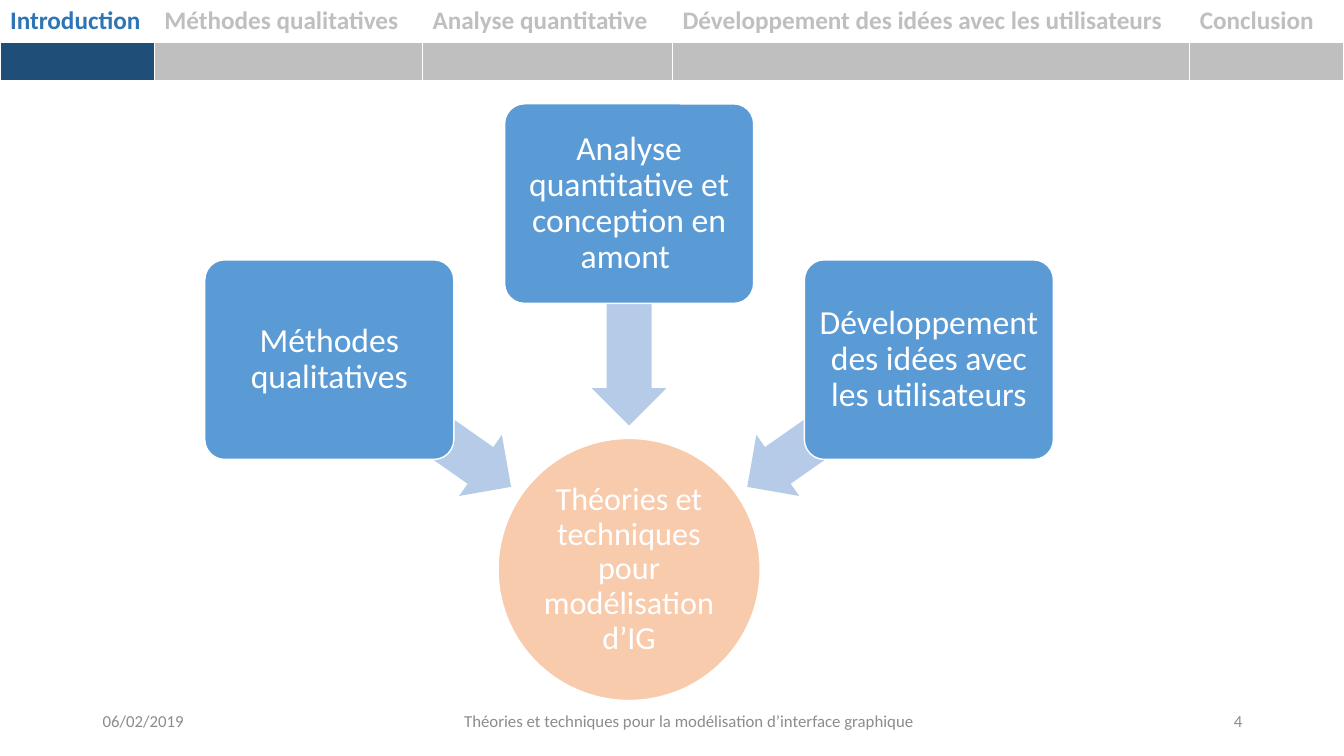
from dataclasses import dataclass
from math import cos, radians, sin

from lxml.etree import SubElement
from pptx import Presentation
from pptx.dml.color import RGBColor
from pptx.enum.shapes import MSO_SHAPE
from pptx.enum.text import MSO_ANCHOR, PP_ALIGN
from pptx.oxml.ns import qn
from pptx.util import Inches, Pt


@dataclass(frozen=True)
class Theme:
    font: str = "Calibri"
    white: str = "FFFFFF"
    active_text: str = "2E75B6"
    active_bar: str = "1F4E79"
    inactive: str = "BFBFBF"
    card: str = "5B9BD5"
    arrow: str = "B5CBE7"
    hub: str = "F8CBAD"
    footer: str = "8C8C8C"
    nav_size: int = 18
    card_size: int = 24
    hub_size: int = 23
    footer_size: int = 12


T = Theme()

SECTIONS = [
    ("Introduction", 1.53),
    ("Méthodes qualitatives", 2.66),
    ("Analyse quantitative", 2.48),
    ("Développement des idées avec les utilisateurs", 5.13),
    ("Conclusion", 1.53),
]
ACTIVE_SECTION = 0

HUB_TEXT = "Théories et techniques pour modélisation d’IG"
# Text and direction from the hub, in degrees clockwise from the right
CARDS = [
    ("Méthodes qualitatives", 215),
    ("Analyse quantitative et conception en amont ", 270),
    ("Développement des idées avec les utilisateurs", 325),
]

# Left, width, alignment, text
FOOTER = [
    (0.92, 3, PP_ALIGN.LEFT, "06/02/2019"),
    (4.42, 4.83, PP_ALIGN.CENTER,
     "Théories et techniques pour la modélisation d’interface graphique"),
    (9.42, 3, PP_ALIGN.RIGHT, "4"),
]


def rgb(color):
    return RGBColor.from_string(color)


def write(tf, text, size, color, align=PP_ALIGN.LEFT, bold=False):
    tf.word_wrap = True
    p = tf.paragraphs[0]
    p.text = text
    p.alignment = align
    p.font.name = T.font
    p.font.size = Pt(size)
    p.font.bold = bold
    p.font.color.rgb = rgb(color)
    return p


def add_centered(s, kind, cx, cy, width, height, fill, outlined=True):
    """Add a filled shape around a centre point."""
    sp = s.shapes.add_shape(kind, Inches(cx - width / 2), Inches(cy - height / 2),
                            Inches(width), Inches(height))
    sp.shadow.inherit = False
    sp.fill.solid()
    sp.fill.fore_color.rgb = rgb(fill)
    if outlined:
        sp.line.color.rgb = rgb(T.white)
        sp.line.width = Pt(1)
    else:
        sp.line.fill.background()
    return sp


def label(sp, text, size, inset):
    tf = sp.text_frame
    tf.margin_left = tf.margin_right = tf.margin_top = tf.margin_bottom = Inches(inset)
    tf.vertical_anchor = MSO_ANCHOR.MIDDLE
    write(tf, text, size, T.white, PP_ALIGN.CENTER).line_spacing = 0.9


def border_cell(cell):
    """Put the white borders ahead of the fill, as the schema requires."""
    pr = cell._tc.get_or_add_tcPr()
    for i, side in enumerate(("a:lnL", "a:lnR", "a:lnT", "a:lnB")):
        ln = SubElement(pr, qn(side), w=str(Pt(1)))
        SubElement(SubElement(ln, qn("a:solidFill")), qn("a:srgbClr"), val=T.white)
        pr.insert(i, ln)


def add_navigation(s, left, top, width, height):
    frame = s.shapes.add_table(2, len(SECTIONS), Inches(left), Inches(top),
                               Inches(width), Inches(height))
    table = frame.table
    label_height = 0.42
    table.rows[0].height = Inches(label_height)
    table.rows[1].height = Inches(height - label_height)
    for i, (name, column_width) in enumerate(SECTIONS):
        active = i == ACTIVE_SECTION
        table.columns[i].width = Inches(column_width)
        # Section name
        head = table.cell(0, i)
        head.fill.background()
        write(head.text_frame, name, T.nav_size,
              T.active_text if active else T.inactive, bold=True)
        # Progress bar
        bar = table.cell(1, i)
        bar.margin_top = bar.margin_bottom = 0
        bar.fill.solid()
        bar.fill.fore_color.rgb = rgb(T.active_bar if active else T.inactive)
        border_cell(head)
        border_cell(bar)


def add_radial_diagram(s, left, top, width, height):
    hub_size = 2.6
    card_width, card_height = 2.47, 1.98
    card_distance, arrow_distance = 3.63, 2.53
    cx = left + width / 2
    cy = top + height - hub_size / 2

    # Hub
    hub = add_centered(s, MSO_SHAPE.OVAL, cx, cy, hub_size, hub_size, T.hub)
    label(hub, HUB_TEXT, T.hub_size, 0.02)

    for text, angle in CARDS:
        dx, dy = cos(radians(angle)), sin(radians(angle))
        # Arrow towards the hub
        arrow = add_centered(s, MSO_SHAPE.LEFT_ARROW, cx + arrow_distance * dx,
                             cy + arrow_distance * dy, 2.2, 0.74, T.arrow, False)
        arrow.adjustments[0] = 0.6
        arrow.adjustments[1] = 0.5
        arrow.rotation = angle
        # Card over the tail of the arrow
        card = add_centered(s, MSO_SHAPE.ROUNDED_RECTANGLE, cx + card_distance * dx,
                            cy + card_distance * dy, card_width, card_height, T.card)
        card.adjustments[0] = 0.1
        label(card, text, T.card_size, 0.05)


def add_footer(s, top, height):
    for left, width, align, text in FOOTER:
        box = s.shapes.add_textbox(Inches(left), Inches(top), Inches(width), Inches(height))
        box.text_frame.vertical_anchor = MSO_ANCHOR.MIDDLE
        write(box.text_frame, text, T.footer_size, T.footer, align)


def main():
    prs = Presentation()
    prs.slide_width, prs.slide_height = Inches(13.33), Inches(7.5)
    s = prs.slides.add_slide(prs.slide_layouts[6])
    add_navigation(s, 0, 0, 13.33, 0.8)
    add_radial_diagram(s, 2.03, 1.03, 8.42, 5.92)
    add_footer(s, 6.95, 0.4)
    prs.save("out.pptx")


if __name__ == "__main__":
    main()
